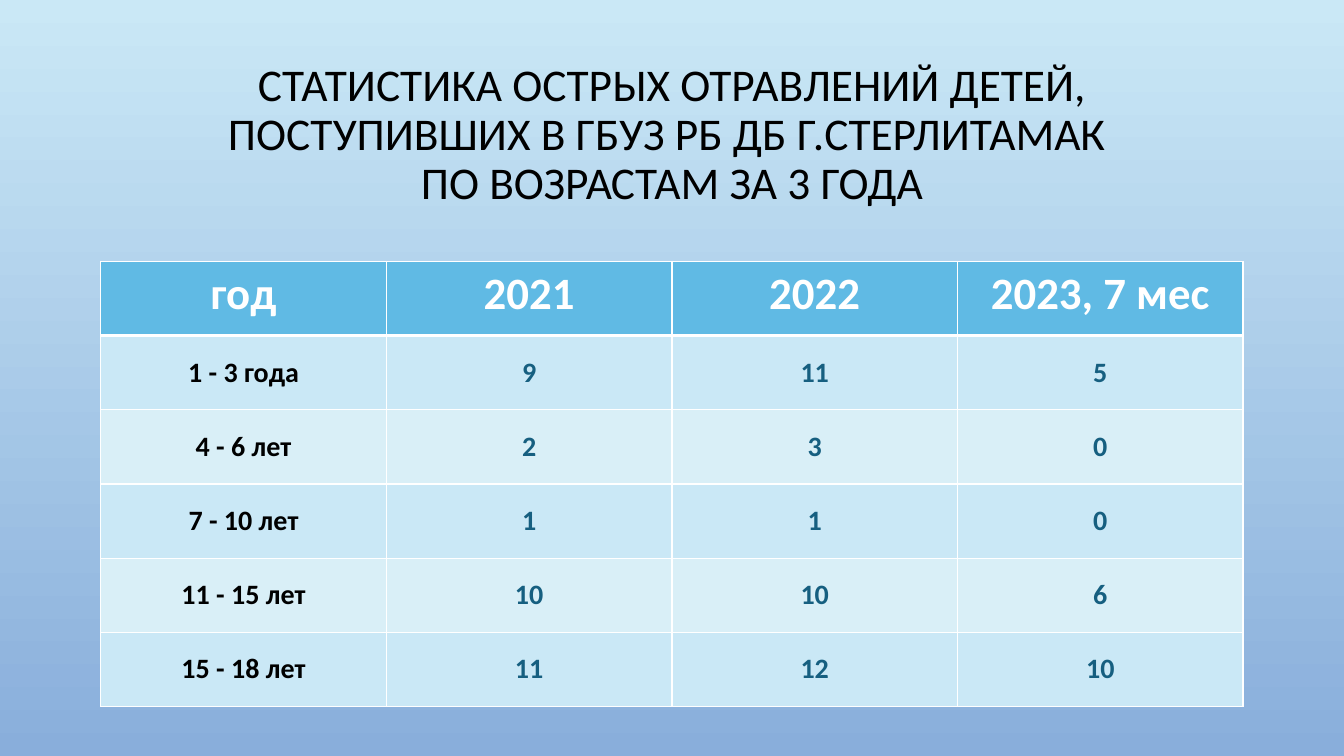
from copy import deepcopy
from dataclasses import dataclass

from lxml import etree
from pptx import Presentation
from pptx.dml.color import RGBColor
from pptx.enum.text import MSO_ANCHOR, MSO_AUTO_SIZE, PP_ALIGN
from pptx.oxml.ns import qn
from pptx.util import Pt

PX = 9525
TOP, MIDDLE = MSO_ANCHOR.TOP, MSO_ANCHOR.MIDDLE
CENTER = PP_ALIGN.CENTER
NO_FIT = MSO_AUTO_SIZE.NONE
FONT = "Calibri"
BLACK = RGBColor(0x00, 0x00, 0x00)
WHITE = RGBColor(0xFF, 0xFF, 0xFF)
SKY = RGBColor(0x60, 0xBA, 0xE4)
PALE = RGBColor(0xCA, 0xE8, 0xF6)
LIGHT = RGBColor(0xD9, 0xEF, 0xF7)
BLUE = RGBColor(0x89, 0xAE, 0xDB)
TEAL = RGBColor(0x16, 0x5F, 0x80)

TITLE = (
    "СТАТИСТИКА ОСТРЫХ ОТРАВЛЕНИЙ ДЕТЕЙ, "
    "ПОСТУПИВШИХ В ГБУЗ РБ ДБ Г.СТЕРЛИТАМАК \vПО ВОЗРАСТАМ ЗА 3 ГОДА"
)
ROWS = [
    ("год", "2021", "2022", "2023, 7 мес"),
    ("1 - 3 года", "9", "11", "5"),
    ("4 - 6 лет", "2", "3", "0"),
    ("7 - 10 лет", "1", "1", "0"),
    ("11 - 15 лет", "10", "10", "6"),
    ("15 - 18 лет", "11", "12", "10"),
]


@dataclass(frozen=True)
class Box:
    left: int
    top: int
    width: int
    height: int

    def emu(self) -> tuple[int, int, int, int]:
        return self.left * PX, self.top * PX, self.width * PX, self.height * PX


@dataclass(frozen=True)
class Style:
    size: float
    color: RGBColor
    fill: RGBColor
    anchor: MSO_ANCHOR


TITLE_BOX = Box(96, 65, 1088, 128)
TABLE_BOX = Box(96, 249, 1088, 424)


def write(frame, text: str, *, size: float, color: RGBColor,
          bold: bool = False, spacing: float = 1.0) -> None:
    frame.text = text
    frame.word_wrap = True
    para = frame.paragraphs[0]
    para.alignment = CENTER
    para.line_spacing = spacing
    for run in para.runs:
        font = run.font
        font.name, font.size, font.bold = FONT, Pt(size), bold
        font.color.rgb = color
    # Line breaks take the size of the text around them
    for brk in para._p.findall(qn("a:br")):
        brk.append(deepcopy(para.runs[0]._r.rPr))


def edge(cell, side: str, width: float) -> None:
    """Draw one white cell border; side is L, R, T or B."""
    line = etree.SubElement(cell._tc.get_or_add_tcPr(), qn(f"a:ln{side}"),
                            w=str(Pt(width)))
    fill = etree.SubElement(line, qn("a:solidFill"))
    etree.SubElement(fill, qn("a:srgbClr"), val=str(WHITE))


def style_at(row: int, col: int) -> Style:
    if row == 0:
        return Style(32, WHITE, SKY, TOP)
    return Style(20, TEAL if col else BLACK, PALE if row % 2 else LIGHT, MIDDLE)


def draw_cell(cell, text: str, row: int, style: Style) -> None:
    write(cell.text_frame, text, size=style.size, color=style.color, bold=True)
    cell.vertical_anchor = style.anchor
    edge(cell, "L", 1)
    edge(cell, "R", 1)
    edge(cell, "T", 3 if row == 1 else 1)
    edge(cell, "B", 3 if row == 0 else 1)
    cell.fill.solid()
    cell.fill.fore_color.rgb = style.fill


def draw_table(slide, box: Box) -> None:
    table = slide.shapes.add_table(len(ROWS), len(ROWS[0]), *box.emu()).table
    for line in table.rows:
        line.height = box.height * PX // len(ROWS)
    for row, texts in enumerate(ROWS):
        for col, text in enumerate(texts):
            draw_cell(table.cell(row, col), text, row, style_at(row, col))


def draw_title(slide, box: Box) -> None:
    title = slide.shapes.title
    title.left, title.top, title.width, title.height = box.emu()
    frame = title.text_frame
    frame.auto_size = NO_FIT
    frame.vertical_anchor = MIDDLE
    write(frame, TITLE, size=32.4, color=BLACK, spacing=0.9)


def paint_back(slide) -> None:
    fill = slide.background.fill
    fill.gradient()
    fill.gradient_angle = 270
    for stop, color in zip(fill.gradient_stops, (PALE, BLUE)):
        stop.color.rgb = color


def main() -> None:
    deck = Presentation()
    deck.slide_width, deck.slide_height = 1280 * PX, 720 * PX
    slide = deck.slides.add_slide(deck.slide_layouts[5])
    paint_back(slide)
    draw_title(slide, TITLE_BOX)
    draw_table(slide, TABLE_BOX)
    deck.save("out.pptx")


if __name__ == "__main__":
    main()
